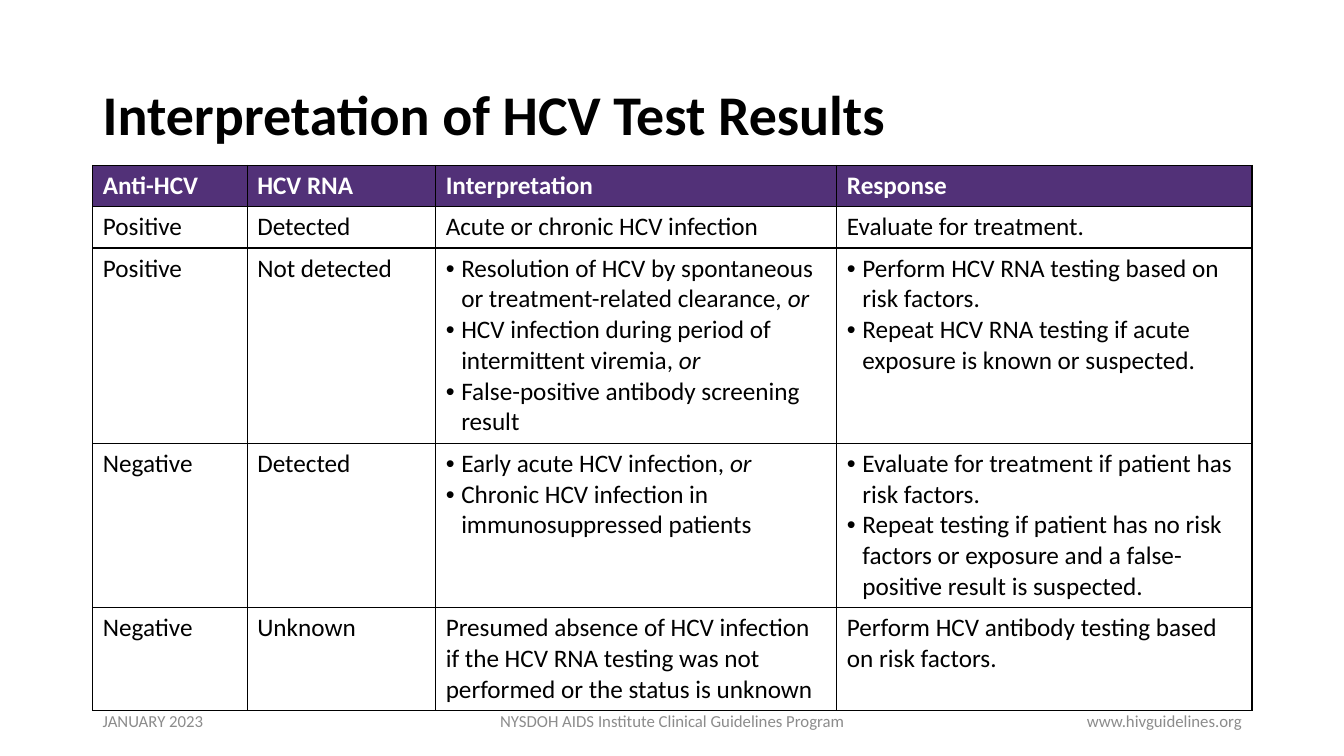
from lxml.etree import SubElement
from pptx import Presentation
from pptx.dml.color import RGBColor
from pptx.enum.text import MSO_ANCHOR, PP_ALIGN
from pptx.oxml.ns import qn
from pptx.util import Cm, Pt

FONT = "Calibri"
PURPLE, BLACK, WHITE, GRAY = "523178", "000000", "FFFFFF", "8C8C8C"
LEFT, WIDTH = 2.34, 29.21
COL_WIDTHS = [3.89, 4.75, 10.11, 10.46]
ROW_HEIGHTS = [1.04, 1.04, 4.92, 4.14, 2.6]
ROWS = [
    ["Anti-HCV", "HCV RNA", "Interpretation", "Response"],
    ["Positive", "Detected", "Acute or chronic HCV infection", "Evaluate for treatment."],
    ["Positive", "Not detected",
     ["Resolution of HCV by spontaneous or treatment-related clearance, or",
      "HCV infection during period of intermittent viremia, or",
      "False-positive antibody screening result"],
     ["Perform HCV RNA testing based on risk factors.",
      "Repeat HCV RNA testing if acute exposure is known or suspected."]],
    ["Negative", "Detected",
     ["Early acute HCV infection, or",
      "Chronic HCV infection in immunosuppressed patients"],
     ["Evaluate for treatment if patient has risk factors.",
      "Repeat testing if patient has no risk factors or exposure "
      "and a false-positive result is suspected."]],
    ["Negative", "Unknown",
     "Presumed absence of HCV infection if the HCV RNA testing was not "
     "performed or the status is unknown",
     "Perform HCV antibody testing based on risk factors."],
]


def rgb(color):
    """Turn a hex string into a colour."""
    return RGBColor.from_string(color)


def add_run(p, text, size, color, bold=False, italic=False):
    """Append a formatted run to a paragraph."""
    r = p.add_run()
    r.text = text
    font = r.font
    font.name, font.size, font.bold, font.italic = FONT, Pt(size), bold, italic
    font.color.rgb = rgb(color)


def add_text(slide, box, text, size, color, align=PP_ALIGN.LEFT, bold=False):
    """Place one vertically centred line of text in a box given in cm."""
    tf = slide.shapes.add_textbox(*map(Cm, box)).text_frame
    tf.word_wrap = True
    tf.vertical_anchor = MSO_ANCHOR.MIDDLE
    p = tf.paragraphs[0]
    p.alignment = align
    add_run(p, text, size, color, bold)


def set_bullet(p):
    """Give a paragraph a hanging bullet."""
    pPr = p._p.get_or_add_pPr()
    pPr.set("marL", str(Cm(0.39)))
    pPr.set("indent", str(-Cm(0.39)))
    SubElement(pPr, qn("a:buFont"), typeface="Arial")
    SubElement(pPr, qn("a:buChar"), char="•")


def set_borders(cell):
    """Draw a thin black line on every side of a cell."""
    tcPr = cell._tc.get_or_add_tcPr()
    for side in ("lnL", "lnR", "lnT", "lnB"):
        ln = SubElement(tcPr, qn(f"a:{side}"), w=str(Pt(1)))
        fill = SubElement(ln, qn("a:solidFill"))
        SubElement(fill, qn("a:srgbClr"), val=BLACK)


def fill_cell(cell, content, header):
    """Write a plain text or a bulleted list into a cell and style it."""
    set_borders(cell)
    if header:
        cell.fill.solid()
        cell.fill.fore_color.rgb = rgb(PURPLE)
    else:
        cell.fill.background()
    color = WHITE if header else BLACK
    tf = cell.text_frame
    bulleted = isinstance(content, list)
    for i, text in enumerate(content if bulleted else [content]):
        p = tf.add_paragraph() if i else tf.paragraphs[0]
        if bulleted:
            set_bullet(p)
        body = text.removesuffix("or") if text.endswith(", or") else text
        add_run(p, body, 18, color, header)
        if body != text:
            add_run(p, "or", 18, color, italic=True)


def add_results_table(slide, left, top):
    """Build the test results table from its top left corner."""
    box = map(Cm, (left, top, sum(COL_WIDTHS), sum(ROW_HEIGHTS)))
    table = slide.shapes.add_table(len(ROWS), len(COL_WIDTHS), *box).table
    table.horz_banding = False
    for column, width in zip(table.columns, COL_WIDTHS):
        column.width = Cm(width)
    for i, (row, height) in enumerate(zip(table.rows, ROW_HEIGHTS)):
        row.height = Cm(height)
        for cell, content in zip(row.cells, ROWS[i]):
            fill_cell(cell, content, header=i == 0)


def add_footer(slide, left, top, width):
    """Place date, program and web address across the given width."""
    side, middle, height = 7.62, 11.43, 1.01
    parts = [
        (left, side, "JANUARY 2023", PP_ALIGN.LEFT),
        (left + (width - middle) / 2, middle,
         "NYSDOH AIDS Institute Clinical Guidelines Program", PP_ALIGN.CENTER),
        (left + width - side, side, "www.hivguidelines.org", PP_ALIGN.RIGHT),
    ]
    for x, w, text, align in parts:
        add_text(slide, (x, top, w, height), text, 12, GRAY, align)


def main():
    """Create the slide and save it."""
    prs = Presentation()
    prs.slide_width, prs.slide_height = Cm(33.87), Cm(19.05)
    slide = prs.slides.add_slide(prs.slide_layouts[6])
    add_text(slide, (LEFT, 1.01, WIDTH, 3.68),
             "Interpretation of HCV Test Results", 40, BLACK, bold=True)
    add_results_table(slide, LEFT, 4.17)
    add_footer(slide, LEFT, 17.66, WIDTH)
    prs.save("out.pptx")


if __name__ == "__main__":
    main()
